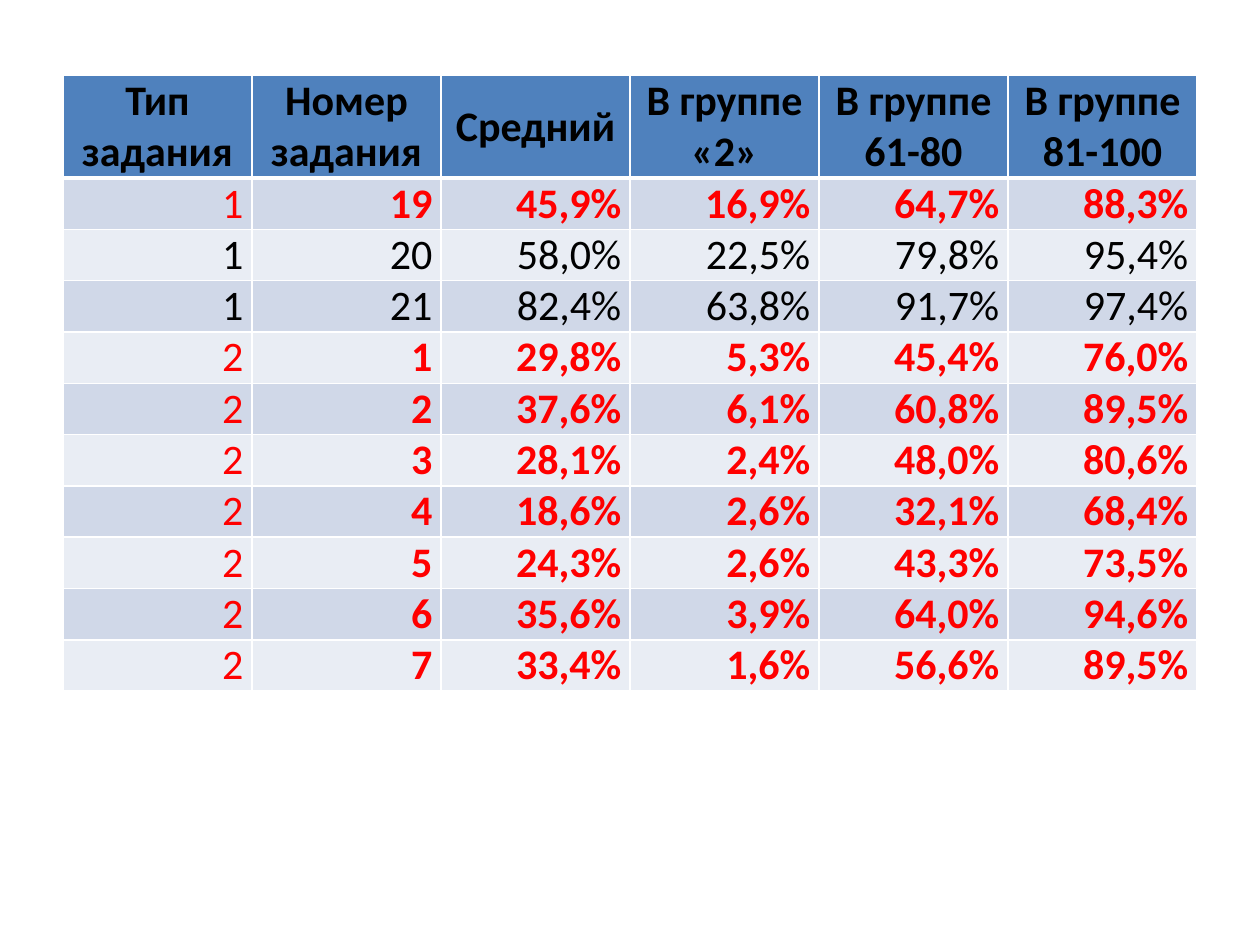
from lxml import etree
from pptx import Presentation
from pptx.dml.color import RGBColor
from pptx.enum import text
from pptx.oxml import ns
from pptx.util import Pt

COLORS = {
    "header": "4F81BD",
    "odd_row": "D0D8E8",
    "even_row": "E9EDF4",
    "border": "FFFFFF",
    "plain": "000000",
    "difficult": "FF0000",
}

HEADERS = ["Тип задания", "Номер задания", "Средний",
           "В группе «2»", "В группе 61-80", "В группе 81-100"]

# Task type, task number, then the average and the three group results.
RESULTS = [
    ["1", "19", "45,9%", "16,9%", "64,7%", "88,3%"],
    ["1", "20", "58,0%", "22,5%", "79,8%", "95,4%"],
    ["1", "21", "82,4%", "63,8%", "91,7%", "97,4%"],
    ["2", "1", "29,8%", "5,3%", "45,4%", "76,0%"],
    ["2", "2", "37,6%", "6,1%", "60,8%", "89,5%"],
    ["2", "3", "28,1%", "2,4%", "48,0%", "80,6%"],
    ["2", "4", "18,6%", "2,6%", "32,1%", "68,4%"],
    ["2", "5", "24,3%", "2,6%", "43,3%", "73,5%"],
    ["2", "6", "35,6%", "3,9%", "64,0%", "94,6%"],
    ["2", "7", "33,4%", "1,6%", "56,6%", "89,5%"],
]
PLAIN_TASKS = {"20", "21"}


class SlideBuilder:
    font_name = "Calibri"
    font_size = Pt(24)
    side_margin = Pt(5)
    row_height = Pt(29.25)

    def __init__(self, slide):
        self.slide = slide

    def add_results_table(self, left, top, width, headers, results):
        row_count = len(results) + 1
        table = self.slide.shapes.add_table(
            row_count, len(headers), left, top, width,
            self.row_height * row_count).table
        for row in table.rows:
            row.height = self.row_height

        for column, header in enumerate(headers):
            self.format_cell(table.cell(0, column), header, "header", "plain",
                             True, text.PP_ALIGN.CENTER, text.MSO_ANCHOR.MIDDLE)
            self.add_borders(table.cell(0, column), bottom=Pt(3))

        for row, values in enumerate(results, start=1):
            fill = "odd_row" if row % 2 else "even_row"
            difficult = values[1] not in PLAIN_TASKS
            color = "difficult" if difficult else "plain"
            for column, value in enumerate(values):
                cell = table.cell(row, column)
                self.format_cell(cell, value, fill, color,
                                 difficult and column > 0,
                                 text.PP_ALIGN.RIGHT, text.MSO_ANCHOR.BOTTOM)
                self.add_borders(cell, top=Pt(3) if row == 1 else Pt(1))

    def format_cell(self, cell, value, fill, color, bold, alignment, anchor):
        cell.fill.solid()
        cell.fill.fore_color.rgb = RGBColor.from_string(COLORS[fill])
        cell.margin_left = cell.margin_right = self.side_margin
        cell.margin_top = cell.margin_bottom = 0
        cell.vertical_anchor = anchor
        cell.text = value
        paragraph = cell.text_frame.paragraphs[0]
        paragraph.alignment = alignment
        font = paragraph.font
        font.name = self.font_name
        font.size = self.font_size
        font.bold = bold
        font.color.rgb = RGBColor.from_string(COLORS[color])

    def add_borders(self, cell, top=Pt(1), bottom=Pt(1)):
        properties = cell._tc.get_or_add_tcPr()
        widths = {"a:lnL": Pt(1), "a:lnR": Pt(1), "a:lnT": top, "a:lnB": bottom}
        # Border lines must come before the cell fill.
        for position, (tag, width) in enumerate(widths.items()):
            line = etree.Element(ns.qn(tag), w=str(int(width)))
            fill = etree.SubElement(line, ns.qn("a:solidFill"))
            etree.SubElement(fill, ns.qn("a:srgbClr"), val=COLORS["border"])
            properties.insert(position, line)


def main():
    presentation = Presentation()
    presentation.slide_width, presentation.slide_height = Pt(720), Pt(540)
    blank_layout = presentation.slide_layouts[6]
    builder = SlideBuilder(presentation.slides.add_slide(blank_layout))
    builder.add_results_table(Pt(36), Pt(43.2), Pt(648), HEADERS, RESULTS)
    presentation.save("out.pptx")


if __name__ == "__main__":
    main()
